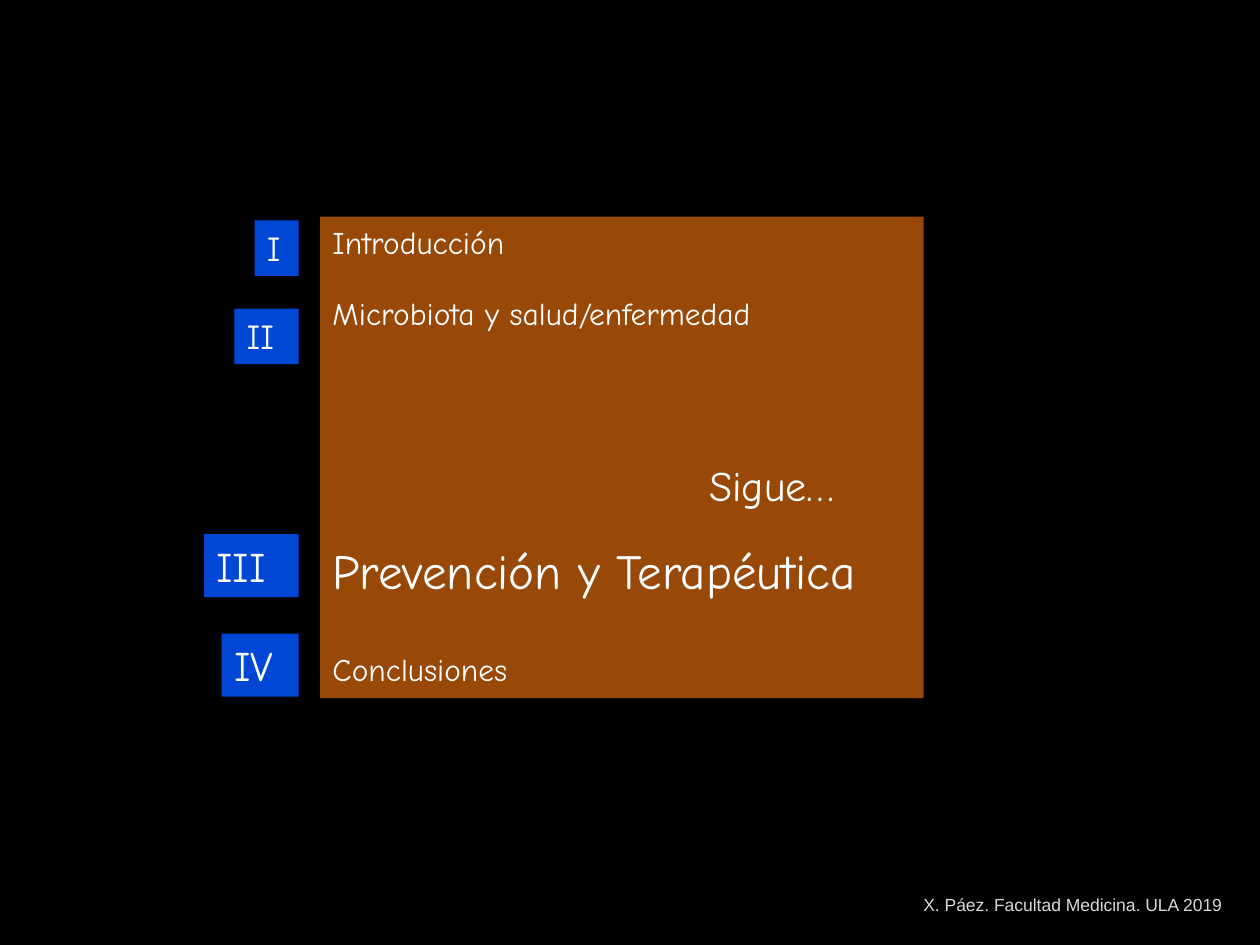
from pptx import Presentation
from pptx.dml.color import RGBColor
from pptx.enum.shapes import MSO_SHAPE
from pptx.enum.text import MSO_ANCHOR, PP_ALIGN
from pptx.util import Inches, Pt

RECTANGLE = MSO_SHAPE.RECTANGLE
TOP = MSO_ANCHOR.TOP
LEFT = PP_ALIGN.LEFT

HEADING_FONT = "Comic Neue"
FOOTER_FONT = "Arial"
WHITE, BLACK, GRAY = "FFFFFF", "000000", "D9D9D9"
BROWN, BLUE = "984807", "0047D6"

BADGE_RIGHT = 2.37
BADGES = [
    ("I", 1.75, 0.35, 0.44, 20),
    ("II", 2.45, 0.51, 0.44, 20),
    ("III", 4.24, 0.75, 0.5, 24),
    ("IV", 5.03, 0.61, 0.5, 24),
]
TOPICS = [
    ("Introducción", 18, 0),
    ("Microbiota y salud/enfermedad", 18, 19),
    ("Prevención y Terapéutica", 28, 119),
    ("Conclusiones", 18, 29),
]


def color(value):
    """Return the colour for a hex string."""
    return RGBColor.from_string(value)


def write_lines(box, lines, font=HEADING_FONT, text_color=WHITE, wrap=True):
    """Fill a box with (text, size, space before) lines."""
    frame = box.text_frame
    frame.word_wrap = wrap
    frame.vertical_anchor = TOP
    for index, (text, size, space) in enumerate(lines):
        para = frame.add_paragraph() if index else frame.paragraphs[0]
        para.text = text
        para.alignment = LEFT
        para.space_before = Pt(space)
        para.font.name = font
        para.font.size = Pt(size)
        para.font.color.rgb = color(text_color)


def add_block(page, area, fill, lines):
    """Add a filled rectangle with text."""
    block = page.shapes.add_shape(RECTANGLE, *map(Inches, area))
    block.shadow.inherit = False
    block.fill.solid()
    block.fill.fore_color.rgb = color(fill)
    block.line.fill.background()
    write_lines(block, lines)


def add_label(page, area, text, size, **style):
    """Add a one-line text box."""
    label = page.shapes.add_textbox(*map(Inches, area))
    write_lines(label, [(text, size, 0)], **style)


def main():
    """Build the agenda slide."""
    deck = Presentation()
    deck.slide_width, deck.slide_height = Inches(10), Inches(7.5)
    page = deck.slides.add_slide(deck.slide_layouts[6])
    page.background.fill.solid()
    page.background.fill.fore_color.rgb = color(BLACK)

    add_label(page, (7.23, 7.05, 2.59, 0.27), "X. Páez. Facultad Medicina. ULA 2019", 10,
              font=FOOTER_FONT, text_color=GRAY, wrap=False)
    add_block(page, (2.54, 1.72, 4.79, 3.82), BROWN, TOPICS)
    for numeral, top, width, height, size in BADGES:
        add_block(page, (BADGE_RIGHT - width, top, width, height), BLUE, [(numeral, size, 0)])
    add_label(page, (5.53, 3.6, 1.3, 0.5), "Sigue…", 24)

    deck.save("out.pptx")


if __name__ == "__main__":
    main()
